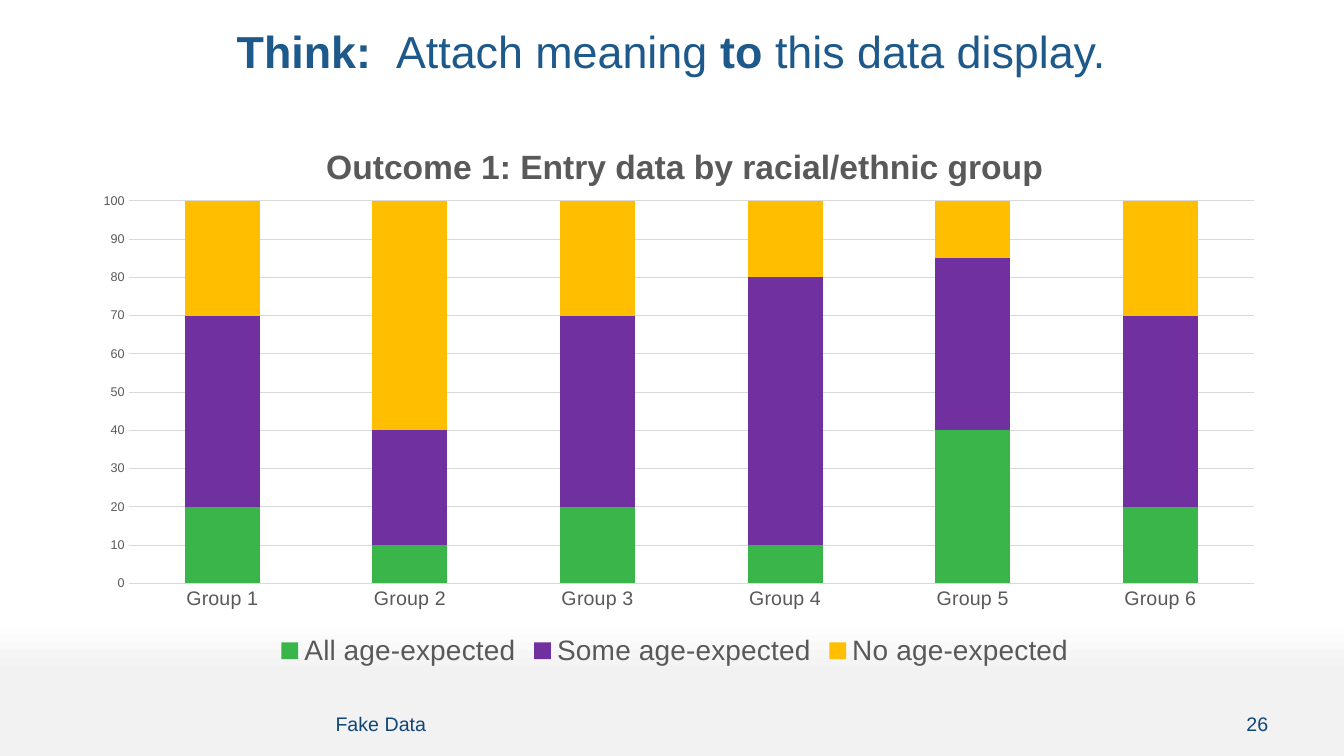
from lxml import etree
from pptx import Presentation
from pptx.chart.data import CategoryChartData
from pptx.dml.color import RGBColor
from pptx.enum.chart import XL_CHART_TYPE as ChartType, XL_LEGEND_POSITION as LegendPosition
from pptx.enum.chart import XL_TICK_MARK as TickMark
from pptx.enum.text import MSO_ANCHOR as Anchor, PP_ALIGN as Align
from pptx.oxml.ns import qn
from pptx.util import Pt

FONT = "Arial"
WHITE = RGBColor(0xFF, 0xFF, 0xFF)
PALE_GRAY = RGBColor(0xF2, 0xF2, 0xF2)
GRID_GRAY = RGBColor(0xD9, 0xD9, 0xD9)
TEXT_GRAY = RGBColor(0x59, 0x59, 0x59)
TITLE_BLUE = RGBColor(0x1D, 0x59, 0x8B)
FOOTER_BLUE = RGBColor(0x10, 0x45, 0x78)
GREEN = RGBColor(0x39, 0xB5, 0x4A)
PURPLE = RGBColor(0x70, 0x30, 0xA0)
YELLOW = RGBColor(0xFF, 0xBE, 0x00)


def set_font(font, size, color, bold=None):
    font.name, font.size, font.bold = FONT, Pt(size), bold
    font.color.rgb = color


def place(parent, index, **settings):
    """Give a chart part a manual layout, in fractions of the chart, as its child at index."""
    for old_layout in parent.findall(qn("c:layout")):
        parent.remove(old_layout)
    layout = etree.Element(qn("c:layout"))
    parent.insert(index, layout)
    manual = etree.SubElement(layout, qn("c:manualLayout"))
    for tag, value in settings.items():
        etree.SubElement(manual, qn(f"c:{tag}")).set("val", str(value))


presentation = Presentation()
presentation.slide_width, presentation.slide_height = Pt(960), Pt(540)
slide = presentation.slides.add_slide(presentation.slide_layouts[6])

# Background: white fading to pale gray near the bottom
fill = slide.background.fill
fill.gradient()
fill.gradient_angle = 270
for stop, position, color in zip(fill.gradient_stops, (0.82, 0.89), (WHITE, PALE_GRAY)):
    stop.position = position
    stop.color.rgb = color

# Slide title
title_box = slide.shapes.add_textbox(Pt(46), Pt(18), Pt(867), Pt(72))
title_box.text_frame.word_wrap = True
paragraph = title_box.text_frame.paragraphs[0]
paragraph.alignment = Align.CENTER
paragraph.line_spacing = 0.9
set_font(paragraph.font, 32, TITLE_BLUE)
for text, bold in (("Think:  ", True), ("Attach meaning", False),
                   (" to ", True), ("this data display.", False)):
    run = paragraph.add_run()
    run.text = text
    run.font.bold = bold

# Stacked column chart
series_rows = (
    ("All age-expected", (20, 10, 20, 10, 40, 20), GREEN),
    ("Some age-expected", (50, 30, 50, 70, 45, 50), PURPLE),
    ("No age-expected", (30, 60, 30, 20, 15, 30), YELLOW),
)
chart_data = CategoryChartData()
chart_data.categories = [f"Group {number}" for number in range(1, 7)]
for name, values, color in series_rows:
    chart_data.add_series(name, values)
chart = slide.shapes.add_chart(ChartType.COLUMN_STACKED, Pt(57.6), Pt(79.2),
                               Pt(855.4), Pt(401.8), chart_data).chart
set_font(chart.font, 10, TEXT_GRAY)

plot = chart.plots[0]
plot.gap_width, plot.overlap = 150, 100
plot.vary_by_categories = False
for series, (name, values, color) in zip(plot.series, series_rows):
    series.format.fill.solid()
    series.format.fill.fore_color.rgb = color

chart.has_title = True
chart_title = chart.chart_title
chart_title.text_frame.text = "Outcome 1: Entry data by racial/ethnic group"
set_font(chart_title.text_frame.paragraphs[0].font, 24, TEXT_GRAY, True)

chart.has_legend = True
legend = chart.legend
legend.position = LegendPosition.BOTTOM
legend.include_in_layout = False
set_font(legend.font, 20, TEXT_GRAY)

category_axis, value_axis = chart.category_axis, chart.value_axis
for axis, size in ((category_axis, 14), (value_axis, 9)):
    axis.major_tick_mark = axis.minor_tick_mark = TickMark.NONE
    set_font(axis.tick_labels.font, size, TEXT_GRAY)
value_axis.minimum_scale, value_axis.maximum_scale, value_axis.major_unit = 0, 100, 10
value_axis.format.line.fill.background()
value_axis.has_major_gridlines = True
for line in (category_axis.format.line, value_axis.major_gridlines.format.line):
    line.color.rgb = GRID_GRAY
    line.width = Pt(0.75)

chart_element = chart.element.find(qn("c:chart"))
place(chart_element.find(qn("c:title")), 1, xMode="edge", yMode="edge", x=0.2, y=0.05)
place(chart_element.find(qn("c:legend")), 1, xMode="edge", yMode="edge", x=0.16, y=0.93)
place(chart_element.find(qn("c:plotArea")), 0, layoutTarget="inner",
      xMode="edge", yMode="edge", x=0.04, y=0.16, w=0.94, h=0.68)

# Footer and slide number
for text, left, width, alignment in (("Fake Data", 232.6, 583.2, Align.LEFT),
                                     ("26", 815.8, 97.2, Align.RIGHT)):
    box = slide.shapes.add_textbox(Pt(left), Pt(497.5), Pt(width), Pt(39.3))
    box.text_frame.word_wrap = True
    box.text_frame.vertical_anchor = Anchor.MIDDLE
    paragraph = box.text_frame.paragraphs[0]
    paragraph.text = text
    paragraph.alignment = alignment
    set_font(paragraph.font, 14, FOOTER_BLUE)

presentation.save("out.pptx")
